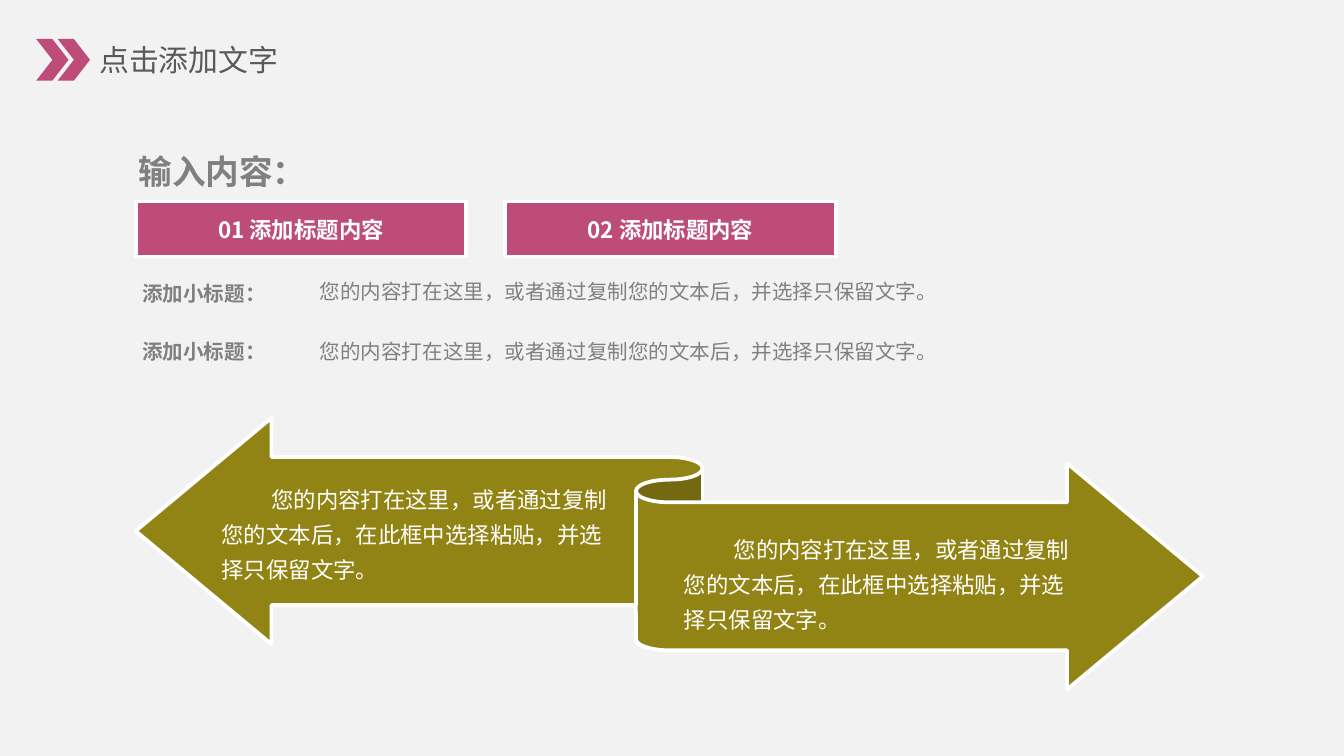
from pptx import Presentation
from pptx.dml.color import RGBColor
from pptx.enum.shapes import MSO_SHAPE
from pptx.enum.text import MSO_ANCHOR, MSO_AUTO_SIZE, PP_ALIGN
from pptx.oxml.ns import qn
from pptx.util import Inches, Pt
from lxml.etree import SubElement

COLORS = {
    "background": "F2F2F2",
    "accent": "BD4D78",
    "ribbon": "918415",
    "title": "595959",
    "body": "808080",
    "white": "FFFFFF",
}
FONT = "Noto Sans CJK SC"
MARGIN = 1.01
LABEL_LEFT = 0.96

presentation = Presentation()
presentation.slide_width = Inches(10)
presentation.slide_height = presentation.slide_width * 9 // 16
slide = presentation.slides.add_slide(presentation.slide_layouts[5])
slide.background.fill.solid()
slide.background.fill.fore_color.rgb = RGBColor.from_string(COLORS["background"])


def write(holder, text, size, color, bold=False, align=PP_ALIGN.LEFT,
          anchor=MSO_ANCHOR.TOP, wrap=True, margins=(0.1, 0.05)):
    frame = holder.text_frame
    frame.auto_size = MSO_AUTO_SIZE.NONE
    frame.word_wrap = wrap
    frame.vertical_anchor = anchor
    frame.margin_left = frame.margin_right = Inches(margins[0])
    frame.margin_top = frame.margin_bottom = Inches(margins[1])
    frame.text = text
    paragraph = frame.paragraphs[0]
    paragraph.alignment = align
    paragraph.font.size = Pt(size)
    paragraph.font.bold = bold
    paragraph.font.name = FONT
    paragraph.font.color.rgb = RGBColor.from_string(COLORS[color])
    defaults = paragraph._p.pPr.find(qn("a:defRPr"))
    SubElement(defaults, qn("a:ea")).set("typeface", FONT)
    return paragraph


def draw(preset, left, top, width, height, fill, outlined=True):
    shape = slide.shapes.add_shape(
        preset, Inches(left), Inches(top), Inches(width), Inches(height))
    shape.shadow.inherit = False
    shape.fill.solid()
    shape.fill.fore_color.rgb = RGBColor.from_string(COLORS[fill])
    if outlined:
        shape.line.color.rgb = RGBColor.from_string(COLORS["white"])
        shape.line.width = Pt(2)
    else:
        shape.line.fill.background()
    return shape


title = slide.shapes.title
title.left, title.top = Inches(0.67), Inches(0.27)
title.width, title.height = Inches(1.96), Inches(0.34)
write(title, "点击添加文字", 16, "title", margins=(0.07, 0.04))

for chevron_left in (0.27, 0.43):
    draw(MSO_SHAPE.CHEVRON, chevron_left, 0.29, 0.24, 0.31, "accent", outlined=False)

heading = slide.shapes.add_textbox(
    Inches(LABEL_LEFT), Inches(1.08), Inches(1.41), Inches(0.38))
write(heading, "输入内容：", 18, "body", bold=True, anchor=MSO_ANCHOR.MIDDLE,
      wrap=False, margins=(0.07, 0.04))

for column, number in enumerate(("01", "02")):
    banner = draw(MSO_SHAPE.RECTANGLE, MARGIN + 2.75 * column, 1.5, 2.46, 0.41, "accent")
    write(banner, f"{number} 添加标题内容", 12, "white", bold=True,
          align=PP_ALIGN.CENTER, anchor=MSO_ANCHOR.MIDDLE)

for row, (detail_top, detail_width) in enumerate(((2.03, 7.37), (2.47, 6.1))):
    subtitle = slide.shapes.add_textbox(
        Inches(LABEL_LEFT), Inches(2.04 + 0.43 * row), Inches(1.13), Inches(0.29))
    write(subtitle, "添加小标题：", 11, "body", bold=True,
          anchor=MSO_ANCHOR.MIDDLE, wrap=False)
    detail = slide.shapes.add_textbox(
        Inches(2.28), Inches(detail_top), Inches(detail_width), Inches(0.29))
    write(detail, "您的内容打在这里，或者通过复制您的文本后，并选择只保留文字。", 11, "body")

ribbon = draw(MSO_SHAPE.LEFT_RIGHT_RIBBON, MARGIN, 3.11, 7.94, 2.02, "ribbon")
for position, share in enumerate((0.545, 0.5, 0.167)):
    ribbon.adjustments[position] = share

for arrow_left, arrow_top in ((1.55, 3.51), (4.99, 3.88)):
    arrow_text = slide.shapes.add_textbox(
        Inches(arrow_left), Inches(arrow_top), Inches(3.18), Inches(0.89))
    paragraph = write(
        arrow_text,
        "您的内容打在这里，或者通过复制您的文本后，在此框中选择粘贴，并选择只保留文字。",
        12, "white")
    paragraph.line_spacing = 1.3
    paragraph._p.pPr.set("indent", str(Inches(0.37)))

presentation.save("out.pptx")
